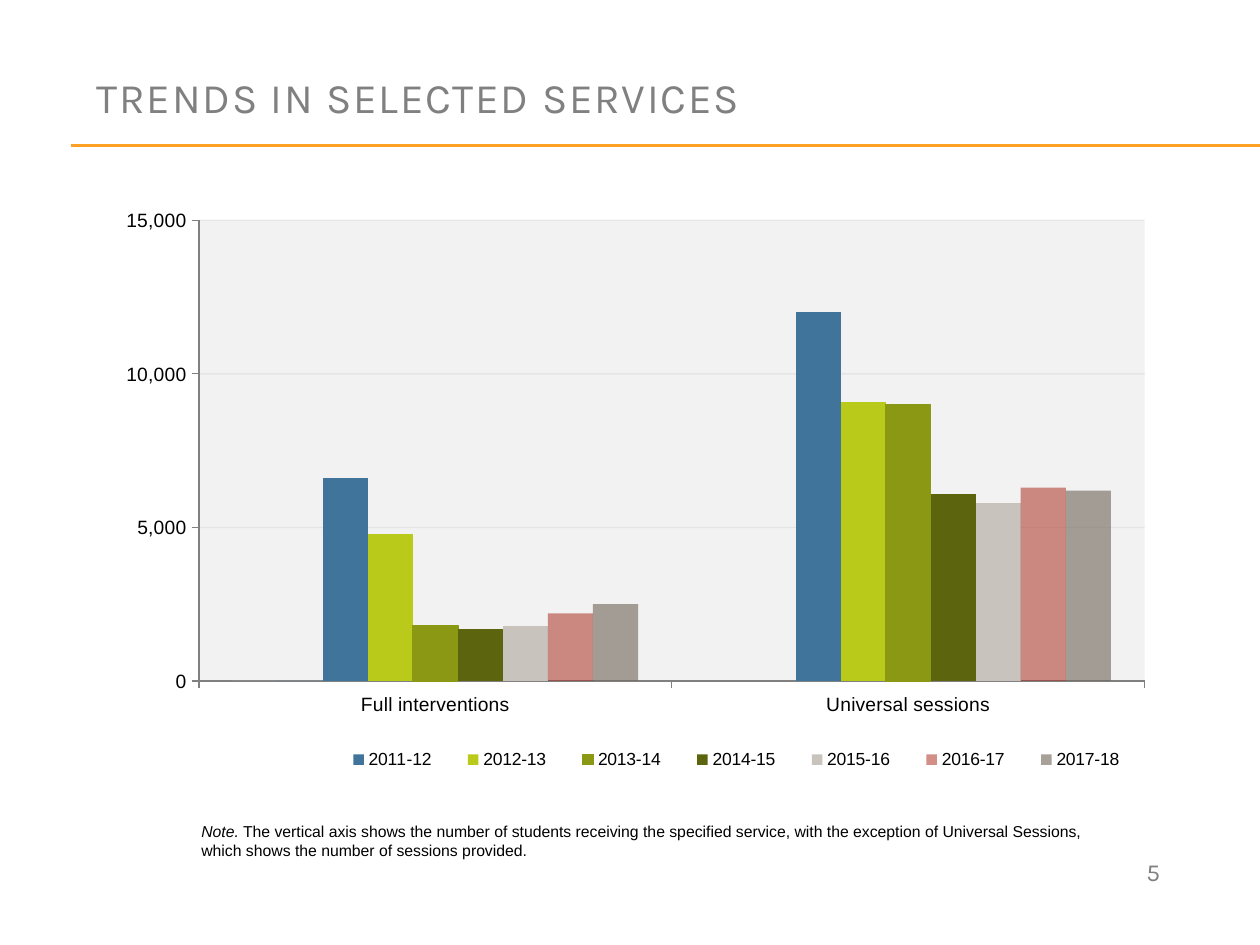
import pptx
import pptx.util
import pptx.chart.data
import pptx.dml.color
import pptx.enum.chart
import pptx.enum.shapes
import pptx.enum.text
import pptx.oxml
import pptx.oxml.ns
from pptx.util import Inches, Pt

COLORS = {"rule": "FDA023", "muted": "808080", "text": "000000",
          "plot": "F2F2F2", "grid": "BFBFBF", "axis": "808080"}
TITLE = "TRENDS IN SELECTED SERVICES"
PAGE_NUMBER = "5"
NOTE = [("Note.", True),
        (" The vertical axis shows the number of students receiving the specified service, "
         "with the exception of Universal Sessions, which shows the number of sessions provided.", False)]
CATEGORIES = ["Full interventions", "Universal sessions"]
SERIES = [
    ("Series 1", [0, None], "ADC8DD", 100),
    ("Series 2", [0, None], "7EA9CA", 100),
    ("2011-12", [6600, 12000], "40749B", 100),
    ("2012-13", [4800, 9100], "B9CA1A", 100),
    ("2013-14", [1800, 9000], "8B9813", 100),
    ("2014-15", [1700, 6100], "5C650D", 100),
    ("2015-16", [1800, 5800], "C8C3BC", 100),
    ("2016-17", [2200, 6300], "AA2B1E", 53),
    ("2017-18", [2500, 6200], "71685C", 62),
]
HIDDEN_KEYS = [0, 1]
PLOT_FRAME = (0.101, 0.078, 0.834, 0.681)
LEGEND_FRAME = (0.21, 0.85, 0.73, 0.05)


def rgb(value):
    return pptx.dml.color.RGBColor.from_string(value)


def parse_chart_xml(body):
    return pptx.oxml.parse_xml(body.replace(">", " " + pptx.oxml.ns.nsdecls("c", "a") + ">", 1))


def set_alpha(parent, percent):
    color = parent.find(".//" + pptx.oxml.ns.qn("a:srgbClr"))
    color.append(parse_chart_xml(f'<a:alpha val="{percent * 1000}"></a:alpha>'))


def manual_layout(frame, inner=False):
    target = '<c:layoutTarget val="inner"/>' if inner else ""
    modes = "".join(f'<c:{name}Mode val="edge"/>' for name in "xy")
    sizes = "".join(f'<c:{name} val="{value}"/>' for name, value in zip("xywh", frame))
    return parse_chart_xml(f"<c:layout><c:manualLayout>{target}{modes}{sizes}</c:manualLayout></c:layout>")


def replace_layout(parent, layout, position):
    old = parent.find(pptx.oxml.ns.qn("c:layout"))
    if old is not None:
        parent.remove(old)
    parent.insert(position, layout)


def set_font(font, name, size, color):
    font.name, font.size = name, Pt(size)
    font.color.rgb = rgb(color)


def add_text(slide, frame, spans, font, size, color, wrap=True, spacing=0):
    box = slide.shapes.add_textbox(*map(Inches, frame))
    box.text_frame.word_wrap = wrap
    para = box.text_frame.paragraphs[0]
    for text, italic in spans:
        span = para.add_run()
        span.text = text
        set_font(span.font, font, size, color)
        span.font.italic = italic
        if spacing:
            span.font._element.set("spc", str(spacing))
    return box


def add_rule(slide, y):
    rule = slide.shapes.add_connector(pptx.enum.shapes.MSO_CONNECTOR.STRAIGHT,
                                      Inches(0.56), Inches(y), Inches(10), Inches(y))
    rule.line.color.rgb = rgb(COLORS["rule"])
    rule.line.width = Pt(0.75)
    rule._element.spPr.append(parse_chart_xml("<a:effectLst></a:effectLst>"))


def style_axis(axis):
    axis.major_tick_mark = pptx.enum.chart.XL_TICK_MARK.OUTSIDE
    axis.minor_tick_mark = pptx.enum.chart.XL_TICK_MARK.NONE
    axis.format.line.color.rgb = rgb(COLORS["axis"])
    axis.format.line.width = Pt(0.75)
    set_font(axis.tick_labels.font, "Arial", 11, COLORS["text"])


def add_services_chart(slide):
    data = pptx.chart.data.CategoryChartData(number_format="#,##0")
    data.categories = CATEGORIES
    for name, values, _, _ in SERIES:
        data.add_series(name, values)
    chart = slide.shapes.add_chart(pptx.enum.chart.XL_CHART_TYPE.COLUMN_CLUSTERED,
                                   Inches(0.67), Inches(1.33), Inches(9), Inches(5.37), data).chart
    chart.has_title = False
    set_font(chart.font, "Karla", 10, COLORS["text"])

    plot = chart.plots[0]
    plot.gap_width, plot.overlap, plot.vary_by_categories = 150, 0, False
    for series, (_, _, color, opacity) in zip(plot.series, SERIES):
        series.format.fill.solid()
        series.format.fill.fore_color.rgb = rgb(color)
        if opacity < 100:
            set_alpha(series._element, opacity)
        if series.name == "2013-14":
            series.format.line.color.rgb = rgb(color)
            series.format.line.width = Pt(0.75)

    style_axis(chart.category_axis)
    axis = chart.value_axis
    style_axis(axis)
    axis.minimum_scale, axis.maximum_scale, axis.major_unit = 0, 15000, 5000
    axis.tick_labels.number_format = "#,##0"
    axis.tick_labels.number_format_is_linked = False
    grid = axis.major_gridlines.format.line
    grid.color.rgb = rgb(COLORS["grid"])
    grid.width = Pt(0.75)
    set_alpha(axis._element.find(pptx.oxml.ns.qn("c:majorGridlines")), 25)

    area = chart._chartSpace.chart.plotArea
    replace_layout(area, manual_layout(PLOT_FRAME, inner=True), 0)
    area.append(parse_chart_xml(
        f'<c:spPr><a:solidFill><a:srgbClr val="{COLORS["plot"]}"/></a:solidFill></c:spPr>'))

    chart.has_legend = True
    legend = chart.legend
    legend.position = pptx.enum.chart.XL_LEGEND_POSITION.BOTTOM
    legend.include_in_layout = False
    set_font(legend.font, "Arial", 10, COLORS["text"])
    replace_layout(legend._element, manual_layout(LEGEND_FRAME), 1)
    for place, index in enumerate(HIDDEN_KEYS, 1):
        legend._element.insert(place, parse_chart_xml(
            f'<c:legendEntry><c:idx val="{index}"/><c:delete val="1"/></c:legendEntry>'))


def main():
    deck = pptx.Presentation()
    deck.slide_width, deck.slide_height = Inches(10), Inches(7.5)
    slide = deck.slides.add_slide(deck.slide_layouts[6])
    for y in (1.15, 1.16):
        add_rule(slide, y)
    add_text(slide, (9, 6.75, 0.4, 0.34), [(PAGE_NUMBER, False)], "Karla", 14, COLORS["muted"], wrap=False)
    title = add_text(slide, (0.67, 0.33, 9, 0.87), [(TITLE, False)], "Karla", 24, COLORS["muted"], spacing=100)
    title.text_frame.vertical_anchor = pptx.enum.text.MSO_ANCHOR.MIDDLE
    add_services_chart(slide)
    note = add_text(slide, (1.5, 6.47, 7.5, 0.4), NOTE, "Arial", 9, COLORS["text"])
    note.text_frame.paragraphs[0].space_before = Pt(4.5)
    deck.save("out.pptx")


if __name__ == "__main__":
    main()
